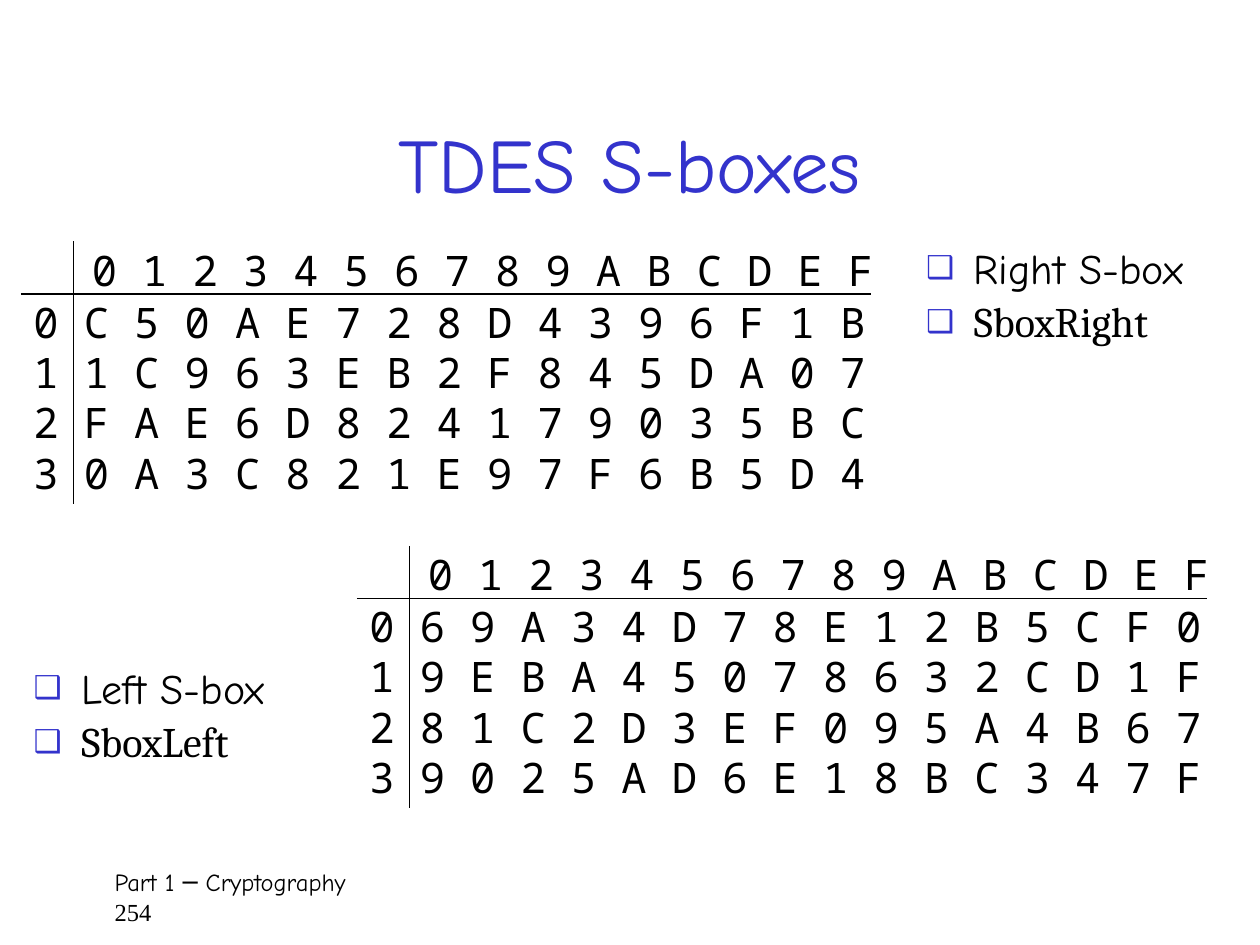
"""Build the TDES S-boxes slide on a grid of twelve units to the inch."""
from lxml import etree
from pptx import Presentation, util as u
from pptx.dml.color import RGBColor
from pptx.enum import shapes, text
from pptx.oxml.ns import qn

THEME = {
    "ink": RGBColor.from_string("000000"),
    "accent": RGBColor.from_string("3333CC"),
    "hand": "Comic Neue", "serif": "Cambria", "number": "Times New Roman",
    "mono": "Noto Sans Mono", "corner": "DejaVu Sans Mono",
    "title": 44, "corner_size": 28, "body": 24, "footer": 14, "rule": 0.75,
}
UNIT = u.Inches(1) / 12


def place(sp, *box):
    sp.left, sp.top, sp.width, sp.height = [u.Emu(round(n * UNIT)) for n in box]
    sp.text_frame.word_wrap = True
    sp.text_frame.auto_size = text.MSO_AUTO_SIZE.NONE
    return sp.text_frame


def style(r, font, size, color="ink"):
    r.font.name, r.font.size = THEME[font], u.Pt(THEME[size])
    r.font.color.rgb = THEME[color]


prs = Presentation()
prs.slide_width, prs.slide_height = u.Inches(10), u.Inches(7.5)
s = prs.slides.add_slide(prs.slide_layouts[3])

tf = place(s.shapes.title, 9, 8, 102, 15)
tf.text = "TDES S-boxes"
tf.vertical_anchor = text.MSO_ANCHOR.MIDDLE
tf.paragraphs[0].alignment = text.PP_ALIGN.CENTER
style(tf.paragraphs[0].runs[0], "hand", "title", "accent")

LISTS = [
    (1, 87, 23, "Right S-box\nSboxRight"),
    (2, 2, 63, "Left S-box\nSboxLeft"),
]
for idx, left, top, words in LISTS:
    tf = place(s.placeholders[idx], left, top, 30, 11)
    tf.text = words
    for p, font in zip(tf.paragraphs, ("hand", "serif")):
        p.line_spacing = 0.9
        style(p.runs[0], font, "body")
        pPr = p._p.get_or_add_pPr()
        pPr.set("marL", str(u.Inches(0.38)))
        pPr.set("indent", str(-u.Inches(0.38)))
        color = etree.SubElement(pPr, qn("a:buClr"))
        etree.SubElement(color, qn("a:srgbClr"), val=str(THEME["accent"]))
        etree.SubElement(pPr, qn("a:buSzPct"), val="75000")
        etree.SubElement(pPr, qn("a:buChar"), char="❑")

SBOXES = [
    (2, 22, ["C50AE728D4396F1B", "1C963EB2F845DA07",
             "FAE6D824179035BC", "0A3C821E97F6B5D4"]),
    (34, 51, ["69A34D78E12B5CF0", "9EBA45078632CD1F",
              "81C2D3EF095A4B67", "9025AD6E18BC347F"]),
]
for left, top, rows in SBOXES:
    tf = place(s.shapes.add_textbox(0, 0, 0, 0), left, top, 83, 26)
    lines = ["0123456789ABCDEF"] + [f"{i}{row}" for i, row in enumerate(rows)]
    tf.text = "\n".join(" ".join(line) for line in lines)
    for p in tf.paragraphs:
        style(p.runs[0], "mono", "body")
    header = tf.paragraphs[0]
    header._p.get_or_add_pPr().set("marL", str(u.Inches(0.23)))
    r = header.add_run()
    r.text = " "
    style(r, "corner", "corner_size")
    header.runs[0]._r.addprevious(r._r)

    for ends in ((left + 5, top + 1, left + 5, top + 26),
                 (left, top + 6, left + 81, top + 6)):
        rule = s.shapes.add_connector(
            shapes.MSO_CONNECTOR.STRAIGHT, *[round(n * UNIT) for n in ends])
        rule.line.color.rgb = THEME["ink"]
        rule.line.width = u.Pt(THEME["rule"])
        etree.SubElement(rule._element.spPr, qn("a:effectLst"))

tf = place(s.shapes.add_textbox(0, 0, 0, 0), 9, 82, 103, 6)
tf.margin_left = u.Inches(0.16)
tf.text = "Part 1 ─ Cryptography\n254"
for p, font in zip(tf.paragraphs, ("hand", "number")):
    style(p.runs[0], font, "footer")

prs.save("out.pptx")
